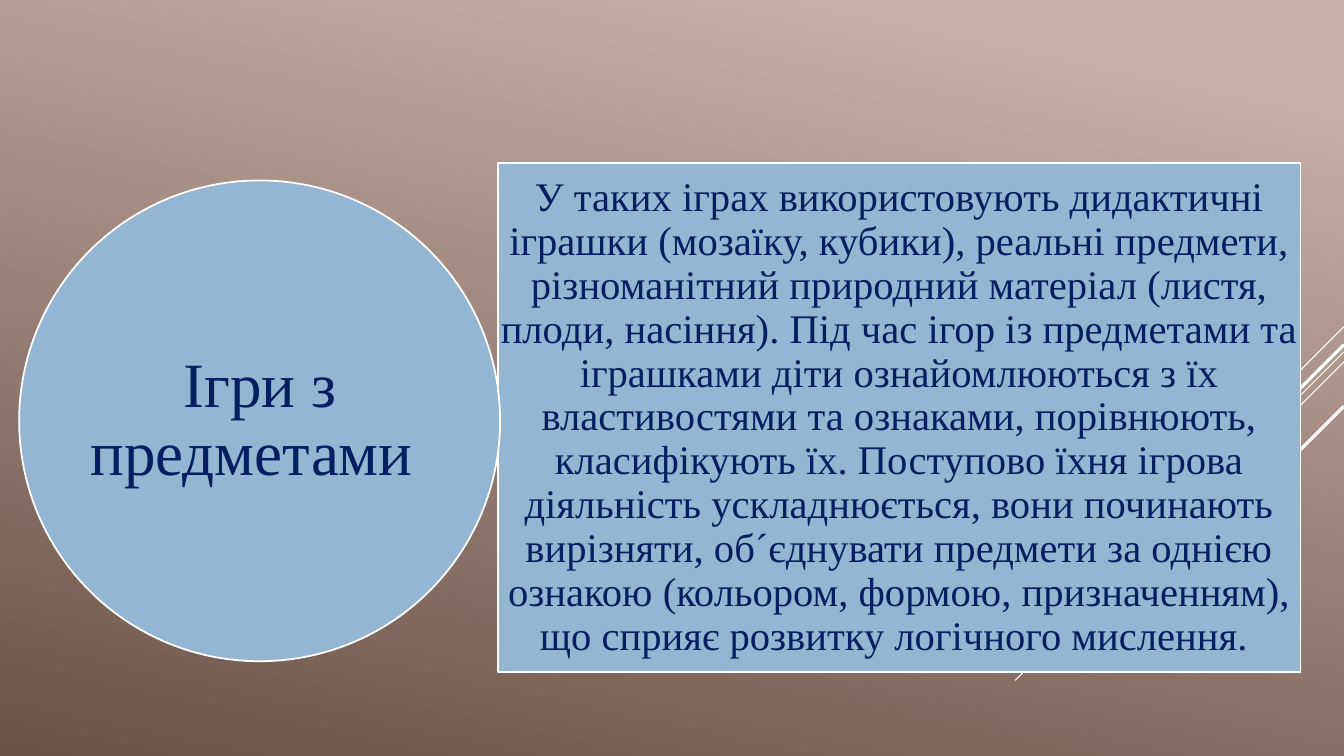
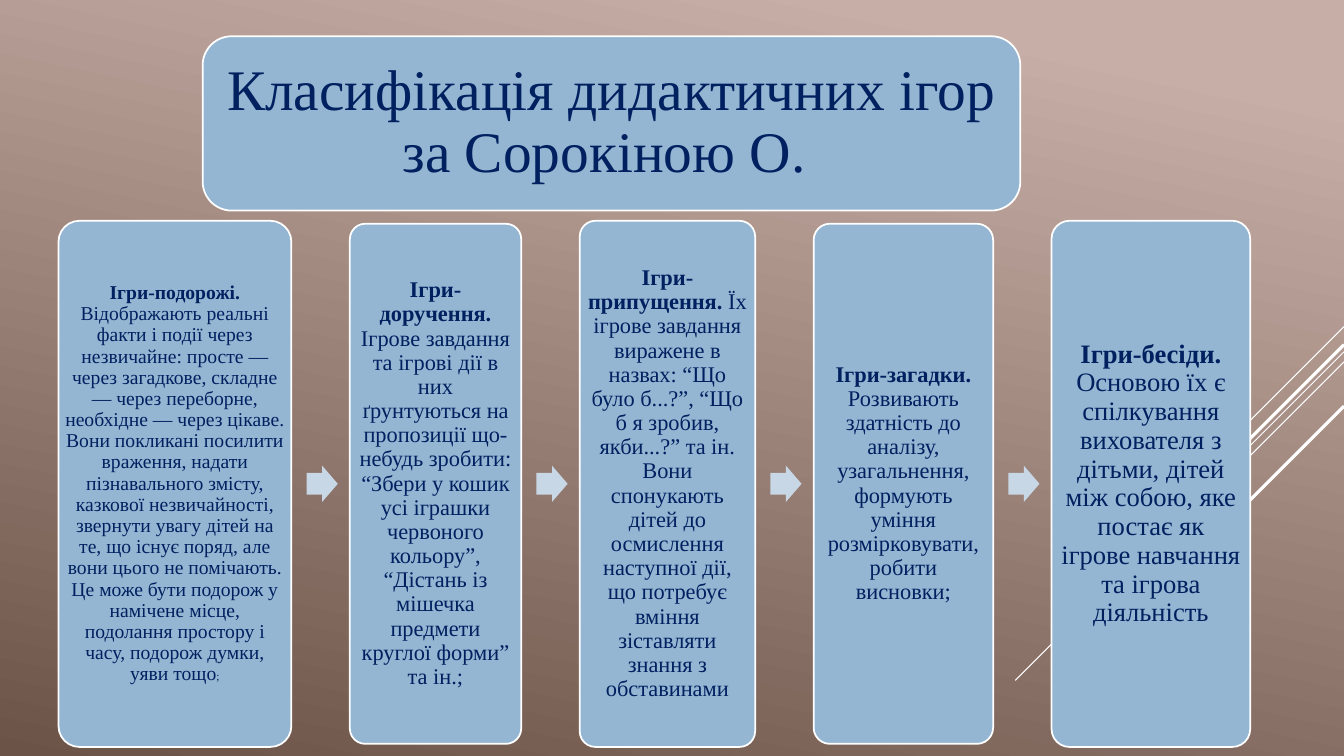
import pptx
import pptx.dml.color
import pptx.enum.shapes
import pptx.enum.text
import pptx.oxml
import pptx.oxml.ns
import pptx.util
from pptx.util import Inches

SHAPE = pptx.enum.shapes.MSO_SHAPE


def rgb(value):
    return pptx.dml.color.RGBColor.from_string(value)


class Deck:
    FONT = "Times New Roman"
    INK, PANEL, ARROW, WHITE = "002060", "94B6D2", "C8D7E5", "FFFFFF"
    BACKGROUND = ((0.1, "C7AFA7"), (1, "6C5348"))
    WIDTH, HEIGHT = 13.33, 7.5
    # Diagonal rays: y at the right edge, run to the left, line width
    RAYS = ((3.24, 1, 0.75), (3.49, 3.26, 0.75), (3.59, 2.07, 0.75),
            (3.42, 1.91, 2.25), (4.03, 1.39, 2.25))

    def __init__(self):
        self.prs = pptx.Presentation()
        self.prs.slide_width = Inches(self.WIDTH)
        self.prs.slide_height = Inches(self.HEIGHT)
        self.s = None

    def new_slide(self):
        """Start a slide with the shared gradient and rays."""
        self.s = self.prs.slides.add_slide(self.prs.slide_layouts[6])
        fill = self.s.background.fill
        fill.gradient()
        fill.gradient_angle = 360 - 102
        for stop, (position, color) in zip(fill.gradient_stops, self.BACKGROUND):
            stop.position = position
            stop.color.rgb = rgb(color)
        for y, run, width in self.RAYS:
            self.ray(y, run, width)

    def ray(self, y, run, width):
        line = self.s.shapes.add_connector(
            pptx.enum.shapes.MSO_CONNECTOR.STRAIGHT,
            Inches(self.WIDTH), Inches(y), Inches(self.WIDTH - run), Inches(y + run))
        line.line.color.rgb = rgb(self.WHITE)
        line.line.width = pptx.util.Pt(width)
        effects = pptx.oxml.ns.qn("a:effectLst")
        line._element.spPr.append(pptx.oxml.parse_xml(
            '<a:effectLst xmlns:a="http://schemas.openxmlformats.org/drawingml/2006/main"/>'
        ) if line._element.spPr.find(effects) is None else line._element.spPr.find(effects))

    def shape(self, kind, box, color, adjustments=()):
        sp = self.s.shapes.add_shape(kind, *map(Inches, box))
        sp.shadow.inherit = False
        sp.fill.solid()
        sp.fill.fore_color.rgb = rgb(color)
        sp.line.fill.background()
        for i, value in enumerate(adjustments):
            sp.adjustments[i] = value
        return sp

    def panel(self, kind, box, runs, margin=0, adjustments=()):
        """Outlined shape with one centred paragraph of (text, size, bold) runs."""
        sp = self.shape(kind, box, self.PANEL, adjustments)
        sp.line.color.rgb = rgb(self.WHITE)
        sp.line.width = pptx.util.Pt(1.25)
        tf = sp.text_frame
        frame_format = {"word_wrap": True,
                        "vertical_anchor": pptx.enum.text.MSO_ANCHOR.MIDDLE}
        for side in ("left", "right", "top", "bottom"):
            frame_format["margin_" + side] = Inches(margin)
        for name, value in frame_format.items():
            setattr(tf, name, value)
        p = tf.paragraphs[0]
        p.alignment = pptx.enum.text.PP_ALIGN.CENTER
        p.line_spacing = 0.9
        for text, size, bold in runs:
            r = p.add_run()
            r.text = text
            font_format = {"name": self.FONT, "size": pptx.util.Pt(size), "bold": bold}
            for name, value in font_format.items():
                setattr(r.font, name, value)
            r.font.color.rgb = rgb(self.INK)

    def arrow(self, left, middle):
        width, height = 0.31, 0.36
        self.shape(SHAPE.RIGHT_ARROW, (left, middle - height / 2, width, height),
                   self.ARROW, (0.6, 0.5))

    def card_row(self, cards, left, middle, gap):
        """Cards of (width, height, margin, runs) with arrows in the gaps."""
        for i, (width, height, margin, runs) in enumerate(cards):
            if i:
                self.arrow(left - gap + 0.15, middle)
            self.panel(SHAPE.ROUNDED_RECTANGLE,
                       (left, middle - height / 2, width, height), runs, margin, (0.09,))
            left += width + gap


OBJECT_GAMES = (
    "У таких іграх використовують дидактичні іграшки (мозаїку, кубики), реальні "
    "предмети, різноманітний природний матеріал (листя, плоди, насіння). Під час ігор "
    "із предметами та іграшками діти ознайомлюються з їх властивостями та ознаками, "
    "порівнюють, класифікують їх. Поступово їхня ігрова діяльність ускладнюється, вони "
    "починають вирізняти, об´єднувати предмети за однією ознакою (кольором, формою, "
    "призначенням), що сприяє розвитку логічного мислення. ")

TALL, SHORT = 5.22, 5.16
CARDS = (
    (2.31, TALL, 0, (
        ("Ігри-подорожі. ", 14, True),
        ("Відображають реальні факти і події через незвичайне: просте — через "
         "загадкове, складне — через переборне, необхідне — через цікаве. Вони "
         "покликані посилити враження, надати пізнавального змісту, казкової "
         "незвичайності, звернути увагу дітей на те, що існує поряд, але вони цього не "
         "помічають. Це може бути подорож у намічене місце, подолання простору і часу, "
         "подорож думки, уяви тощо", 14, False),
        (";", 8, False))),
    (1.7, SHORT, 0.02, (
        ("Ігри-доручення. ", 16, True),
        ("Ігрове завдання та ігрові дії в них ґрунтуються на пропозиції що-небудь "
         "зробити: “Збери у кошик усі іграшки червоного кольору”, “Дістань із мішечка "
         "предмети круглої форми” та ін.;", 16, False))),
    (1.74, TALL, 0.02, (
        ("Ігри-припущення. ", 16, True),
        ("Їх ігрове завдання виражене в назвах: “Що було б...?”, “Що б я зробив, "
         "якби...?” та ін. Вони спонукають дітей до осмислення наступної дії, що "
         "потребує вміння зіставляти знання з обставинами", 16, False))),
    (1.78, SHORT, 0.02, (
        ("Ігри-загадки. ", 16, True),
        ("Розвивають здатність до аналізу, узагальнення, формують уміння "
         "розмірковувати, робити висновки;", 16, False))),
    (1.97, TALL, 0.03, (
        ("Ігри-бесіди. ", 19, True),
        ("Основою їх є спілкування вихователя з дітьми, дітей між собою, яке постає як "
         "ігрове навчання та ігрова діяльність", 19, False))),
)


def main():
    deck = Deck()

    deck.new_slide()
    deck.panel(SHAPE.RECTANGLE, (4.94, 1.62, 7.96, 5.05),
               ((OBJECT_GAMES, 29, False),), 0.02)
    deck.panel(SHAPE.OVAL, (0.19, 1.79, 4.77, 4.77),
               (("Ігри з предметами ", 45, False),))

    deck.new_slide()
    deck.card_row(CARDS, left=0.58, middle=4.8, gap=0.58)
    deck.panel(SHAPE.ROUNDED_RECTANGLE, (2.01, 0.36, 8.11, 1.73),
               (("Класифікація дидактичних ігор за Сорокіною О. ", 41, False),), 0.09)

    deck.prs.save("out.pptx")


if __name__ == "__main__":
    main()
